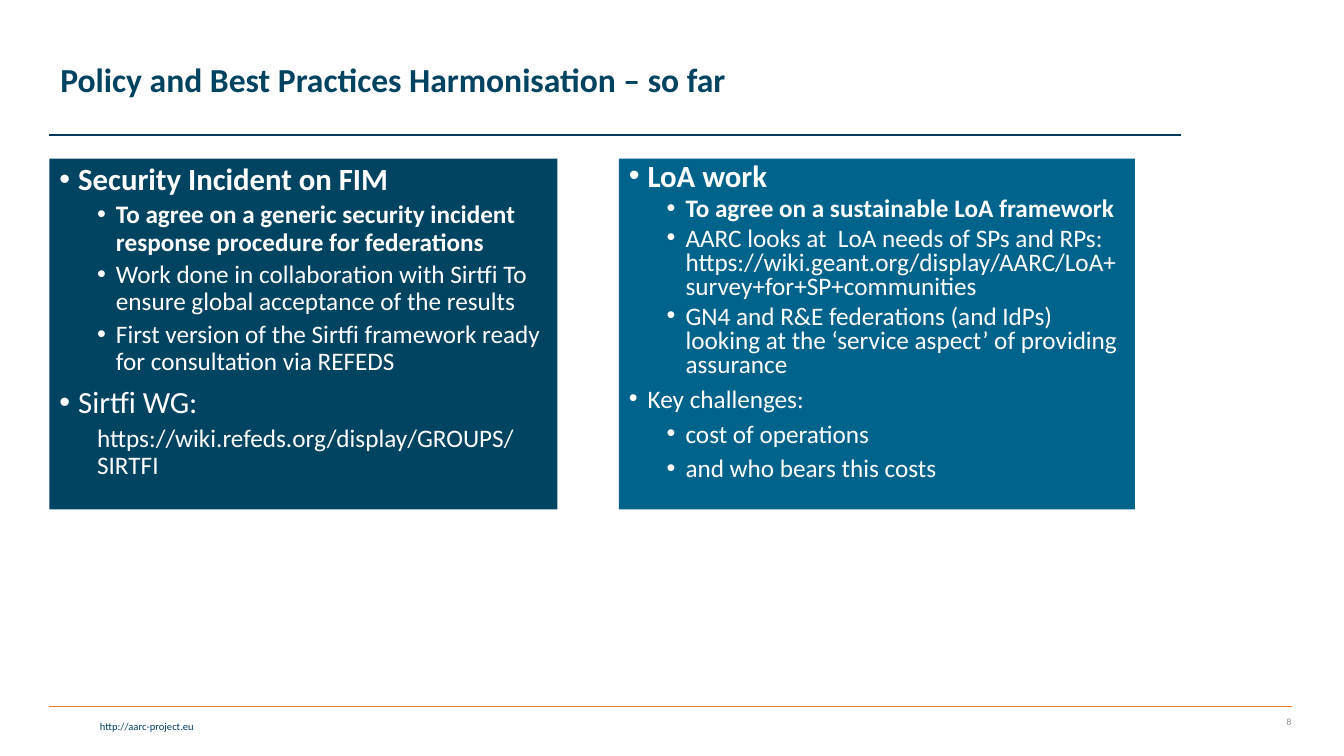
from lxml import etree
from pptx import Presentation
from pptx.dml.color import RGBColor
from pptx.enum.shapes import MSO_CONNECTOR, MSO_SHAPE
from pptx.enum.text import MSO_ANCHOR, PP_ALIGN
from pptx.oxml.ns import qn
from pptx.util import Pt

LEFT, RIGHT = PP_ALIGN.LEFT, PP_ALIGN.RIGHT
TOP, MIDDLE = MSO_ANCHOR.TOP, MSO_ANCHOR.MIDDLE
RECTANGLE = MSO_SHAPE.RECTANGLE
STRAIGHT = MSO_CONNECTOR.STRAIGHT

WHITE = RGBColor(0xFF, 0xFF, 0xFF)
NAVY = RGBColor(0x00, 0x44, 0x61)
BLUE = RGBColor(0x00, 0x63, 0x8C)
TITLE_BLUE = RGBColor(0x00, 0x43, 0x61)
RULE_BLUE = RGBColor(0x00, 0x39, 0x59)
FOOTER_BLUE = RGBColor(0x00, 0x3F, 0x5E)
ORANGE = RGBColor(0xF5, 0x7B, 0x20)
GRAY = RGBColor(0x8C, 0x8C, 0x8C)

FONT = "Calibri"
HANG = 13.5
MARGIN = 35.3
PANEL_TOP, PANEL_HEIGHT = 113.3, 250.5


def write(para, text, size, color, bold=False, align=LEFT, spacing=1.0,
          before=0, indent=0, bullet=False):
    """Fill one paragraph with formatted text; indent is in points."""
    properties = para._p.get_or_add_pPr()
    properties.set("marL", str(Pt(indent)))
    properties.set("indent", str(Pt(-HANG if bullet else 0)))
    if bullet:
        etree.SubElement(properties, qn("a:buFont"), typeface="Arial")
        etree.SubElement(properties, qn("a:buChar"), char="•")
    else:
        etree.SubElement(properties, qn("a:buNone"))
    para.alignment = align
    para.line_spacing = spacing
    para.space_before = Pt(before)
    span = para.add_run()
    span.text = text
    span.font.name = FONT
    span.font.size = Pt(size)
    span.font.bold = bold
    span.font.color.rgb = color


deck = Presentation()
deck.slide_width, deck.slide_height = Pt(960), Pt(540)
page = deck.slides.add_slide(deck.slide_layouts[6])

# Rules under the title and above the footer
for line_y, line_end, color in [(96.5, 843.8, RULE_BLUE), (504.7, 923, ORANGE)]:
    rule = page.shapes.add_connector(
        STRAIGHT, Pt(MARGIN), Pt(line_y), Pt(line_end), Pt(line_y))
    rule.line.color.rgb = color
    rule.line.width = Pt(1)
    etree.SubElement(rule._element.spPr, qn("a:effectLst"))

# Title, web address and page number
labels = [
    ("Policy and Best Practices Harmonisation – so far",
     (36, 5.8, 756.7, 104.4), MIDDLE,
     dict(size=24, color=TITLE_BLUE, bold=True, spacing=0.9)),
    ("http://aarc-project.eu", (2.2, 510.5, 143.3, 16.6), TOP,
     dict(size=7.5, color=FOOTER_BLUE, align=RIGHT)),
    ("8", (871.2, 504.7, 58.3, 21.6), MIDDLE,
     dict(size=6.8, color=GRAY, align=RIGHT)),
]
for text, place, anchor, style in labels:
    box = page.shapes.add_textbox(*[Pt(length) for length in place])
    box.text_frame.word_wrap = True
    box.text_frame.vertical_anchor = anchor
    write(box.text_frame.paragraphs[0], text, **style)

# Paragraph styles of the two panels
TOPIC = dict(size=22, before=7.5, indent=HANG, bullet=True)
HEADING = dict(TOPIC, bold=True)
POINT = dict(size=18, before=3.8, indent=3 * HANG, bullet=True)
GOAL = dict(POINT, bold=True)
LINK = dict(size=18, before=3.8, indent=2 * HANG)
SMALL_TOPIC = dict(TOPIC, size=18)
CHALLENGE = dict(POINT, before=7.5)

security_items = [
    ("Security Incident on FIM", HEADING),
    ("To agree on a generic security incident response procedure for "
     "federations", GOAL),
    ("Work done in collaboration with Sirtfi To ensure global acceptance of "
     "the results", POINT),
    ("First version of the Sirtfi framework ready for consultation via REFEDS",
     POINT),
    ("Sirtfi WG:", TOPIC),
    ("https://wiki.refeds.org/display/GROUPS/SIRTFI", LINK),
]
assurance_items = [
    ("LoA work", HEADING),
    ("To agree on a sustainable LoA framework", GOAL),
    ("AARC looks at  LoA needs of SPs and RPs: "
     "https://wiki.geant.org/display/AARC/LoA+survey+for+SP+communities",
     POINT),
    ("GN4 and R&E federations (and IdPs) looking at the ‘service aspect’ of "
     "providing assurance", POINT),
    ("Key challenges:", SMALL_TOPIC),
    ("cost of operations", CHALLENGE),
    ("and who bears this costs", CHALLENGE),
]

# Panels
panels = [
    (MARGIN, 362.9, NAVY, 0.9, security_items),
    (442.1, 368.6, BLUE, 0.8, assurance_items),
]
for left, width, fill, spacing, items in panels:
    panel = page.shapes.add_shape(
        RECTANGLE, Pt(left), Pt(PANEL_TOP), Pt(width), Pt(PANEL_HEIGHT))
    panel.shadow.inherit = False
    panel.fill.solid()
    panel.fill.fore_color.rgb = fill
    panel.line.fill.background()
    frame = panel.text_frame
    frame.word_wrap = True
    frame.vertical_anchor = TOP
    for number, (text, style) in enumerate(items):
        para = frame.add_paragraph() if number else frame.paragraphs[0]
        before = style["before"] if number else 0
        write(para, text, color=WHITE, spacing=spacing,
              **dict(style, before=before))

deck.save("out.pptx")
